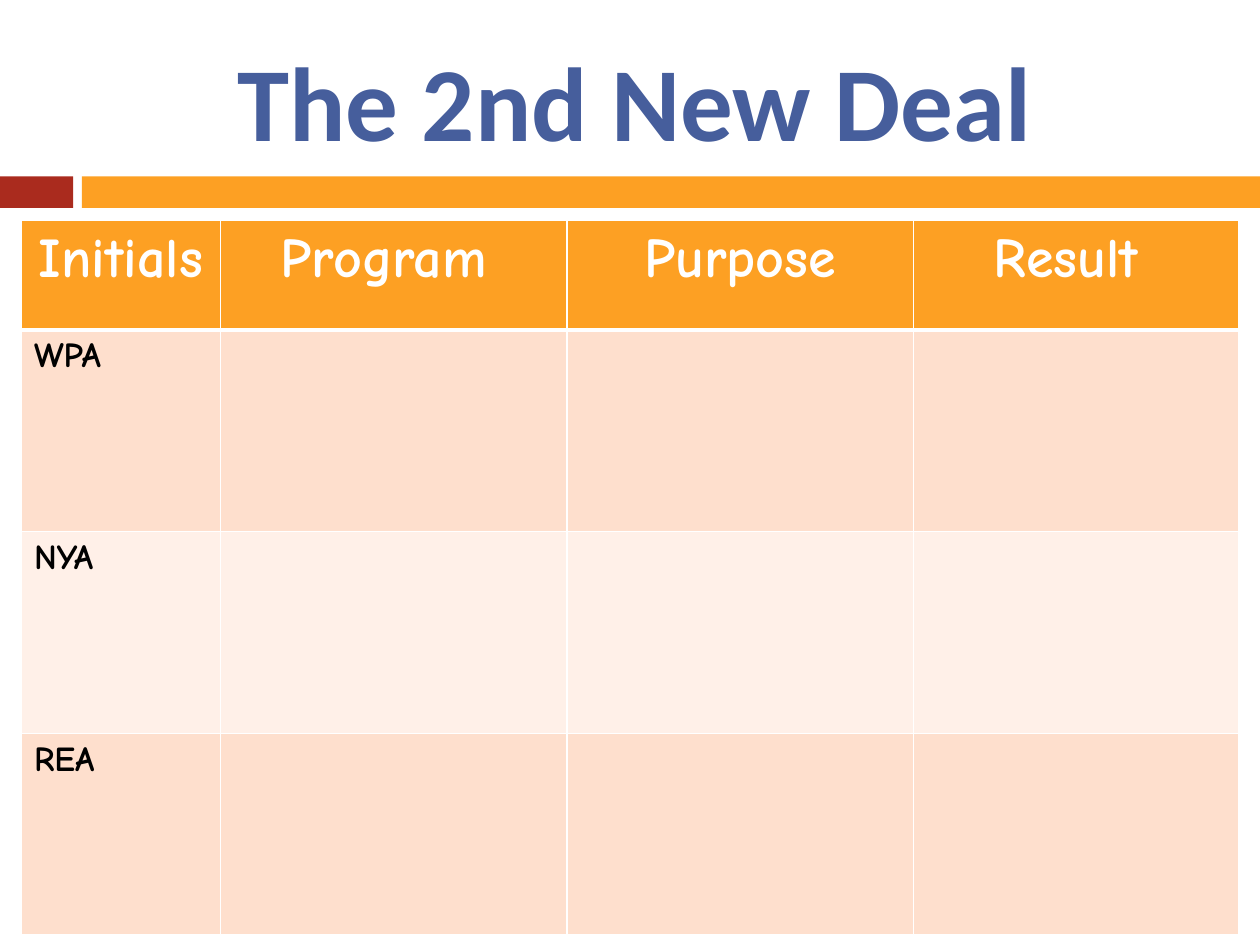
from lxml import etree
from pptx import Presentation, util as u
from pptx.dml.color import RGBColor
from pptx.enum import shapes, text
from pptx.oxml.ns import qn

COLORS = {
    "title": "465E9C", "accent": "AA2B1E", "header": "FDA023",
    "band_dark": "FEDFCD", "band_light": "FFF0E8",
    "white": "FFFFFF", "black": "000000",
}
HEADINGS = ["Initials ", "Program ", "Purpose", "Result "]
PROGRAMS = ["WPA", "NYA", "REA"]
COLUMN_WIDTHS = [1.58, 2.75, 2.75, 2.58]
HEADER_HEIGHT, PROGRAM_HEIGHT = 0.87, 1.6


class DeckStyle:
    """Holds the fonts, the colours and the current slide."""
    title_font, table_font = "Calibri", "Comic Neue"

    def __init__(self, width, height):
        self.deck = Presentation()
        self.deck.slide_width = u.Inches(width)
        self.deck.slide_height = u.Inches(height)
        self.slide = self.deck.slides.add_slide(self.deck.slide_layouts[5])

    def color(self, key):
        return RGBColor.from_string(COLORS[key])

    def box(self, left, top, width, height):
        """Turn shares of the slide's size into lengths."""
        across, down = self.deck.slide_width, self.deck.slide_height
        return (int(left * across), int(top * down),
                int(width * across), int(height * down))

    def add_words(self, frame, words, size, font, color, align):
        paragraph = frame.paragraphs[0]
        paragraph.alignment = align
        run = paragraph.add_run()
        run.text = words
        run.font.size, run.font.name, run.font.bold = u.Pt(size), font, True
        run.font.color.rgb = self.color(color)

    def title(self, words, *area):
        heading = self.slide.shapes.title
        heading.left, heading.top, heading.width, heading.height = self.box(*area)
        frame = heading.text_frame
        frame.vertical_anchor = text.MSO_ANCHOR.MIDDLE
        frame.auto_size = text.MSO_AUTO_SIZE.NONE
        self.add_words(frame, words, 60, self.title_font, "title", text.PP_ALIGN.CENTER)

    def bar(self, color, *area):
        strip = self.slide.shapes.add_shape(shapes.MSO_SHAPE.RECTANGLE, *self.box(*area))
        strip.shadow.inherit = False
        strip.fill.solid()
        strip.fill.fore_color.rgb = self.color(color)
        strip.line.fill.background()

    def borders(self, cell, **widths):
        """Draw white cell edges; widths are points by side (L, R, T, B)."""
        properties = cell._tc.get_or_add_tcPr()
        for place, (side, width) in enumerate(widths.items()):
            edge = etree.Element(qn(f"a:ln{side}"), w=str(u.Pt(width)))
            fill = etree.SubElement(edge, qn("a:solidFill"))
            etree.SubElement(fill, qn("a:srgbClr"), val=COLORS["white"])
            properties.insert(place, edge)

    def table(self, headings, labels, *area):
        grid = self.slide.shapes.add_table(
            len(labels) + 1, len(headings), *self.box(*area)).table
        for column, width in zip(grid.columns, COLUMN_WIDTHS):
            column.width = u.Inches(width)
        for r, row in enumerate(grid.rows):
            row.height = u.Inches(PROGRAM_HEIGHT if r else HEADER_HEIGHT)
            band = ("band_dark" if r % 2 else "band_light") if r else "header"
            for cell in row.cells:
                cell.fill.solid()
                cell.fill.fore_color.rgb = self.color(band)
                self.borders(cell, L=1, R=1, T=1 if r != 1 else 3, B=1 if r else 3)
        for c, heading in enumerate(headings):
            self.add_words(grid.cell(0, c).text_frame, heading, 32, self.table_font,
                           "white", text.PP_ALIGN.CENTER)
        for r, label in enumerate(labels, 1):
            self.add_words(grid.cell(r, 0).text_frame, label, 20, self.table_font,
                           "black", text.PP_ALIGN.LEFT)


def main():
    style = DeckStyle(10, 7.5)
    bar_top, bar_height, bar_start = 1.4 / 7.5, 0.25 / 7.5, 0.065
    style.bar("accent", 0, bar_top, 0.058, bar_height)
    style.bar("header", bar_start, bar_top, 1 - bar_start, bar_height)
    style.title("The 2nd New Deal ", 0.067, 0.25 / 7.5, 0.892, 1.08 / 7.5)
    style.table(HEADINGS, PROGRAMS, 0.017, 1.75 / 7.5, 0.967, 5.67 / 7.5)
    style.deck.save("out.pptx")


if __name__ == "__main__":
    main()
